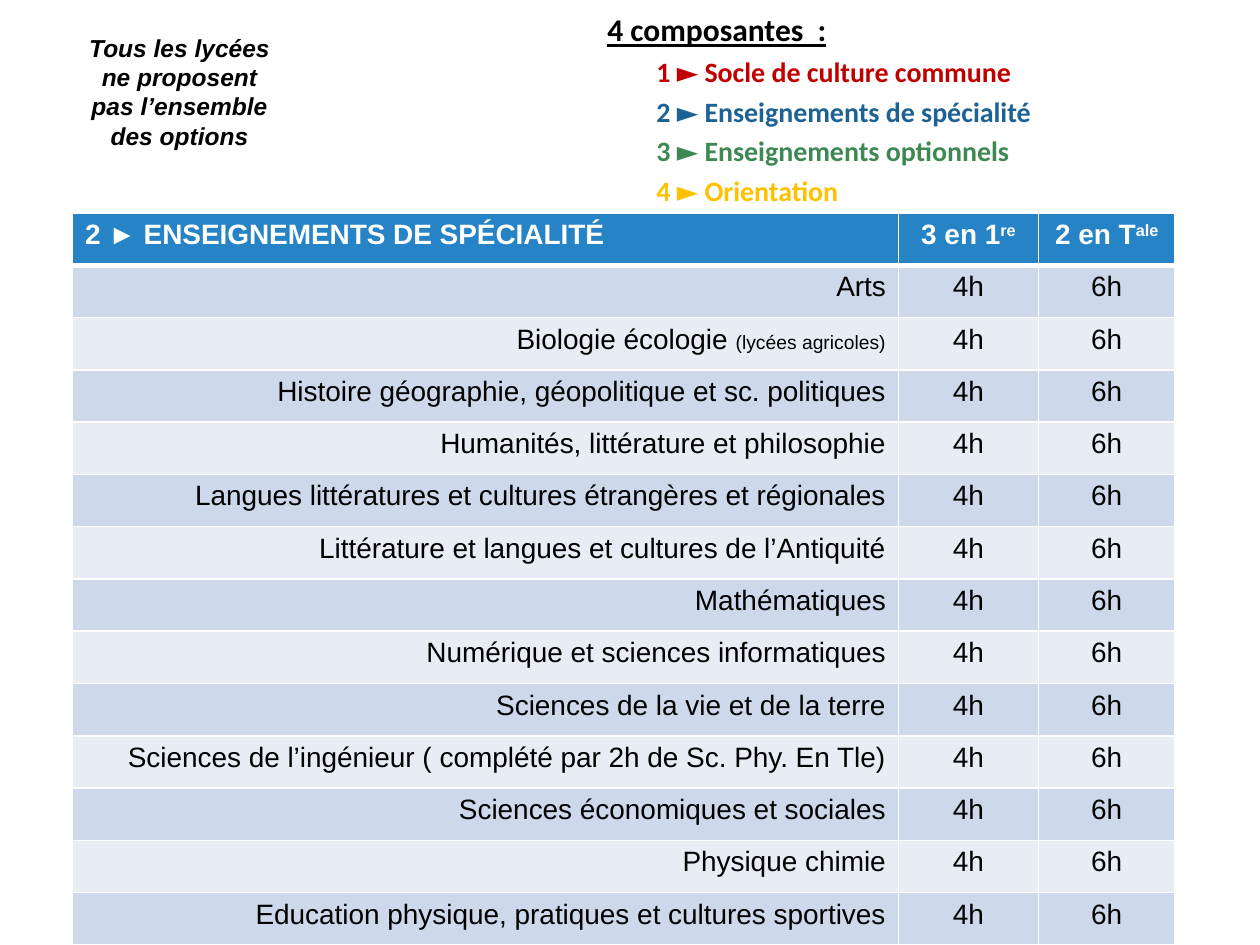
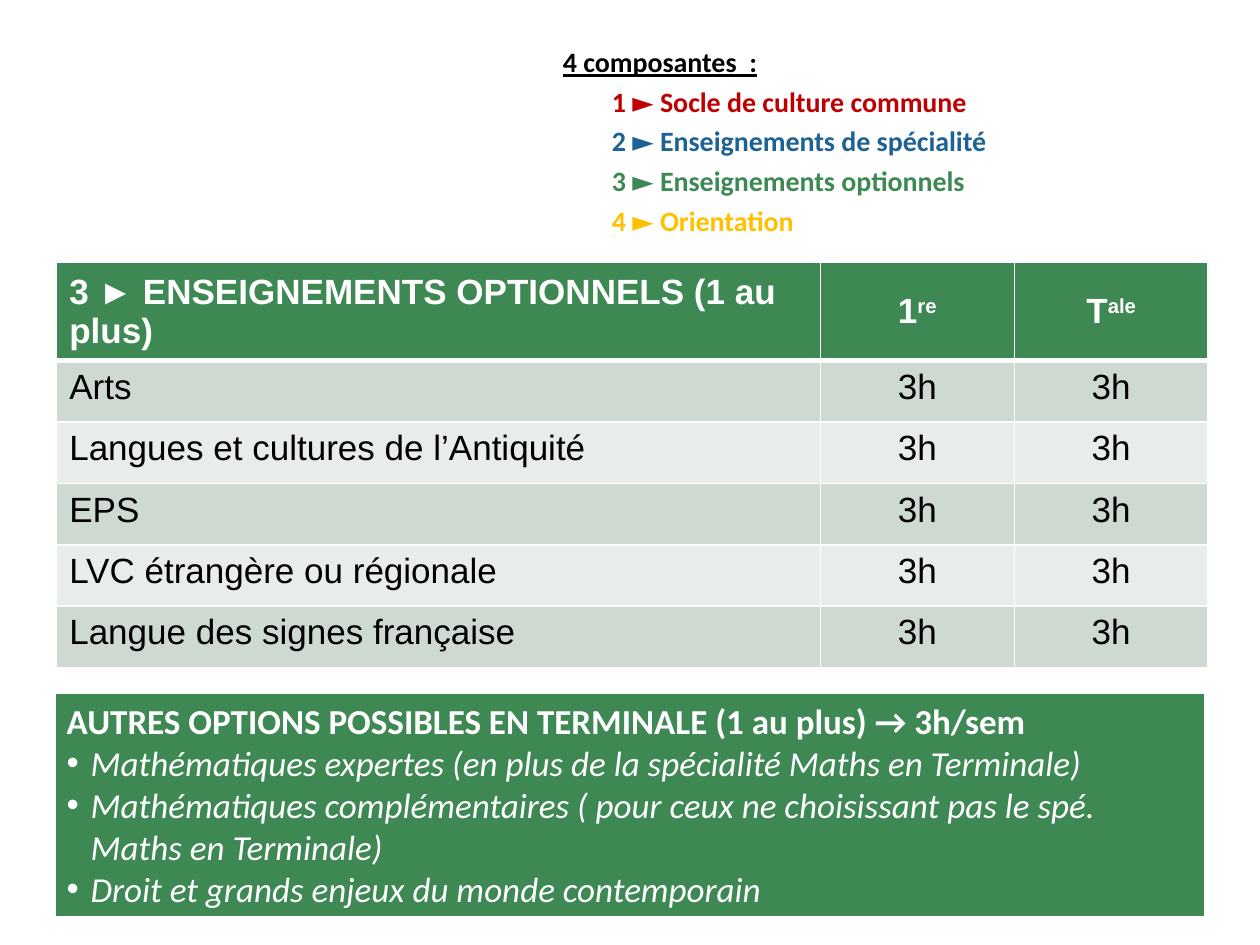
from lxml import etree
from pptx import Presentation, util as u
from pptx.dml.color import RGBColor
from pptx.enum import shapes, text
from pptx.oxml import ns

Pt = u.Pt
hex_color = RGBColor.from_string
LEFT, CENTER, RIGHT = text.PP_ALIGN.LEFT, text.PP_ALIGN.CENTER, text.PP_ALIGN.RIGHT
WHITE, BLACK, BLUE, GREEN = "FFFFFF", "000000", "2683C6", "3E8853"
COMPONENTS = [
    ("1", "Socle de culture commune", "C00000"),
    ("2", "Enseignements de spécialité", "1D6294"),
    ("3", "Enseignements optionnels", GREEN),
    ("4", "Orientation", "FFC000"),
]


def add_span(para, words, size, color, font="Arial", bold=False, italic=False, raised=False):
    span = para.add_run()
    span.text = words
    span.font.name = font
    span.font.size = Pt(size)
    span.font.bold = bold
    span.font.italic = italic
    span.font.color.rgb = hex_color(color)
    if raised:
        span.font._element.set("baseline", "30000")
    return span


def add_border(cell, side, width):
    """Draw a white border; sides must come in the order L, R, T, B."""
    properties = cell._tc.get_or_add_tcPr()
    line = etree.SubElement(properties, ns.qn(f"a:ln{side}"), w=str(Pt(width)))
    fill = etree.SubElement(line, ns.qn("a:solidFill"))
    etree.SubElement(fill, ns.qn("a:srgbClr"), val=WHITE)


specialities = [
    "Arts",
    "Biologie écologie |(lycées agricoles)",
    "Histoire géographie, géopolitique et sc. politiques",
    "Humanités, littérature et philosophie",
    "Langues littératures et cultures étrangères et régionales",
    "Littérature et langues et cultures de l’Antiquité",
    "Mathématiques",
    "Numérique et sciences informatiques",
    "Sciences de la vie et de la terre",
    "Sciences de l’ingénieur ( complété par 2h de Sc. Phy. En Tle)",
    "Sciences économiques et sociales",
    "Physique chimie",
    "Education physique, pratiques et cultures sportives",
]
options = [
    "Arts",
    "Langues et cultures de l’Antiquité",
    "EPS",
    "LVC étrangère ou régionale",
    "Langue des signes française",
]

# In a cell, "|" starts the smaller part: raised in the header, plain elsewhere.
pages = [
    dict(
        header=["2 ► ENSEIGNEMENTS DE SPÉCIALITÉ", "3 en 1|re", "2 en T|ale"],
        subjects=specialities, hours=["4h", "6h"], subject_align=RIGHT,
        place=(41.4, 121.7), columns=[472, 80, 78], header_height=29.88, row_height=29.88,
        size=16, inset=3.6, header_anchor=text.MSO_ANCHOR.TOP,
        fills=[BLUE, "CDD9EA", "E8EDF5"],
        legend_place=(340, 0.7), legend_title_size=18,
    ),
    dict(
        header=["3 ► ENSEIGNEMENTS OPTIONNELS (1 au plus)", "1|re", "T|ale"],
        subjects=options, hours=["3h", "3h"], subject_align=LEFT,
        place=(32.4, 150), columns=[436.4, 110.8, 110.8], header_height=44, row_height=35.1,
        size=20, inset=4, header_anchor=text.MSO_ANCHOR.MIDDLE,
        fills=[GREEN, "CEDAD1", "E8EDE9"],
        legend_place=(314.6, 20.2), legend_title_size=16,
    ),
]

deck = Presentation()
deck.slide_width, deck.slide_height = Pt(720), Pt(540)

for content in pages:
    page = deck.slides.add_slide(deck.slide_layouts[6])

    # Table of subjects and weekly hours
    rows = [content["header"]] + [[subject] + content["hours"] for subject in content["subjects"]]
    heights = [content["header_height"]] + [content["row_height"]] * len(content["subjects"])
    left, top = content["place"]
    table = page.shapes.add_table(
        len(rows), 3, Pt(left), Pt(top), Pt(sum(content["columns"])), Pt(sum(heights))
    ).table
    for column, width in zip(table.columns, content["columns"]):
        column.width = Pt(width)
    for r, row in enumerate(rows):
        table.rows[r].height = Pt(heights[r])
        is_header = r == 0
        for c, words in enumerate(row):
            cell = table.cell(r, c)
            for side in "LRTB":
                under_header = (side, r) in (("B", 0), ("T", 1))
                add_border(cell, side, 3 if under_header else 1)
            cell.fill.solid()
            cell.fill.fore_color.rgb = hex_color(
                content["fills"][0 if is_header else 2 - r % 2])
            cell.margin_left = cell.margin_right = Pt(7.2)
            cell.margin_top = cell.margin_bottom = Pt(content["inset"])
            if is_header:
                cell.vertical_anchor = content["header_anchor"]
            para = cell.text_frame.paragraphs[0]
            if c:
                para.alignment = CENTER
            else:
                para.alignment = LEFT if is_header else content["subject_align"]
            color = WHITE if is_header else BLACK
            main, _, detail = words.partition("|")
            add_span(para, main, content["size"], color, bold=is_header)
            if detail:
                detail_size = content["size"] if is_header else 11
                add_span(para, detail, detail_size, color, bold=is_header, raised=is_header)

    # Legend of the four components
    left, top = content["legend_place"]
    frame = page.shapes.add_textbox(Pt(left), Pt(top), Pt(380), Pt(146)).text_frame
    frame.word_wrap = True
    title = add_span(frame.paragraphs[0], "4 composantes  :", content["legend_title_size"],
                     BLACK, "Calibri", bold=True)
    title.font.underline = True
    for number, name, color in COMPONENTS:
        para = frame.add_paragraph()
        para._p.get_or_add_pPr().set("marL", str(Pt(28)))
        add_span(para, number, 16, color, "Calibri", bold=True)
        add_span(para, " ►", 16, color, "Calibri")
        add_span(para, " " + name, 16, color, "Calibri", bold=True)
    for para in frame.paragraphs:
        para.line_spacing = 1.08
        para.space_after = Pt(2)

# Reminder beside the first legend
note = deck.slides[0].shapes.add_textbox(Pt(43.2), Pt(15.1), Pt(118.8), Pt(74.9)).text_frame
note.word_wrap = True
note.auto_size = text.MSO_AUTO_SIZE.SHAPE_TO_FIT_TEXT
note.paragraphs[0].alignment = CENTER
add_span(note.paragraphs[0], "Tous les lycées ne proposent pas l’ensemble des options",
         14, BLACK, bold=True, italic=True)

# Other options, under the second table
box = deck.slides[1].shapes.add_shape(
    shapes.MSO_SHAPE.RECTANGLE, Pt(31), Pt(396), Pt(658), Pt(128.2))
box.shadow.inherit = False
box.fill.solid()
box.fill.fore_color.rgb = hex_color(GREEN)
box.line.color.rgb = hex_color(WHITE)
box.line.width = Pt(1.5)
frame = box.text_frame
frame.word_wrap = True
frame.auto_size = text.MSO_AUTO_SIZE.SHAPE_TO_FIT_TEXT
frame.vertical_anchor = text.MSO_ANCHOR.TOP
add_span(frame.paragraphs[0], "AUTRES OPTIONS POSSIBLES EN TERMINALE (1 au plus) → 3h/sem",
         20, WHITE, "Calibri", bold=True)
for option in [
    "Mathématiques expertes (en plus de la spécialité Maths en Terminale)",
    "Mathématiques complémentaires ( pour ceux ne choisissant pas le spé. Maths en Terminale)",
    "Droit et grands enjeux du monde contemporain",
]:
    para = frame.add_paragraph()
    properties = para._p.get_or_add_pPr()
    properties.set("marL", str(Pt(13.7)))
    properties.set("indent", str(-Pt(13.7)))
    etree.SubElement(properties, ns.qn("a:buFont"), typeface="Arial")
    etree.SubElement(properties, ns.qn("a:buChar"), char="•")
    add_span(para, option, 20, WHITE, "Calibri", italic=True)
for para in frame.paragraphs:
    para.alignment = LEFT

deck.save("out.pptx")
